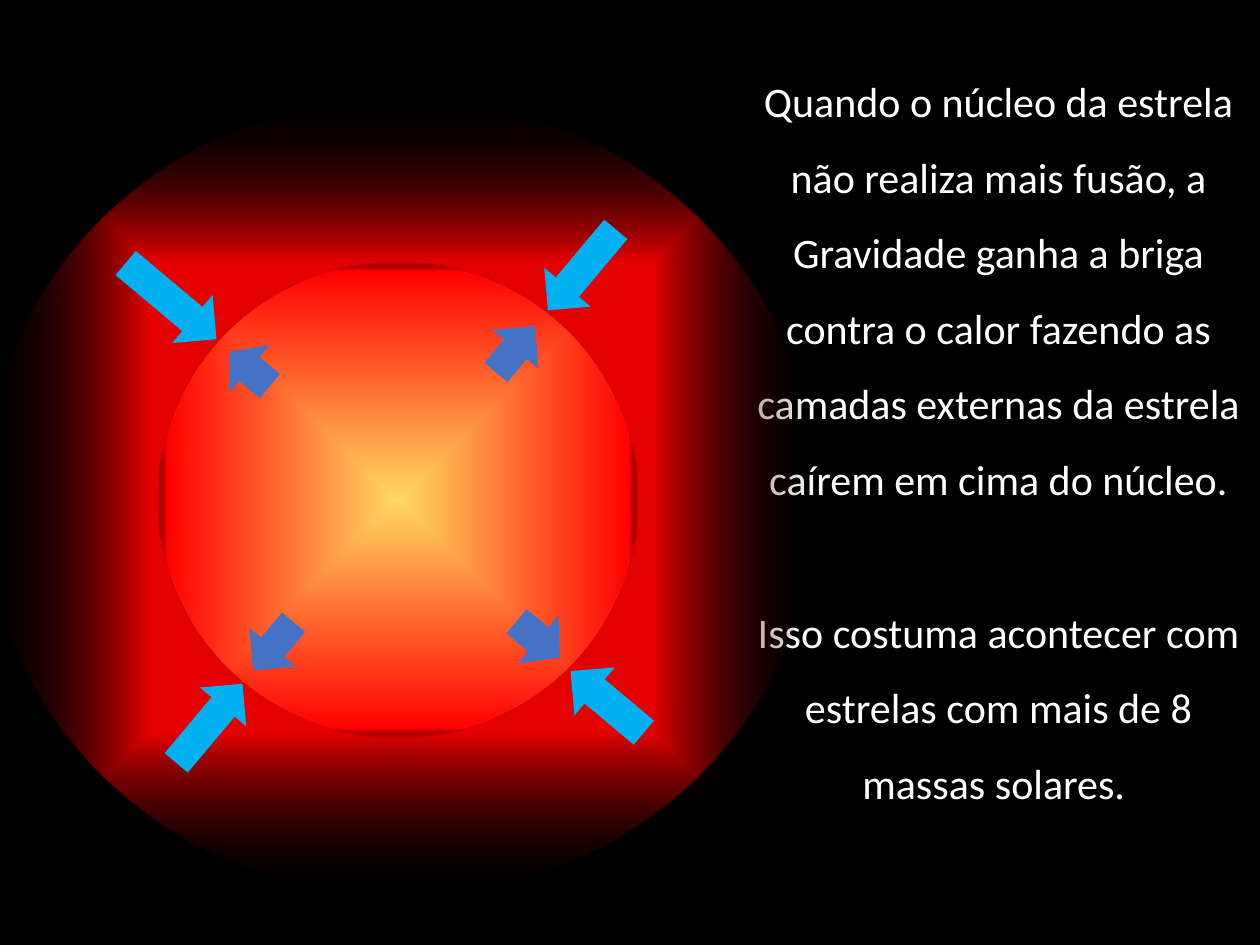
from dataclasses import dataclass

from lxml import etree
from pptx import Presentation
from pptx.dml.color import RGBColor
from pptx.enum.shapes import MSO_SHAPE
from pptx.enum.text import MSO_AUTO_SIZE, PP_ALIGN
from pptx.oxml.ns import qn
from pptx.shapes.autoshape import Shape
from pptx.shapes.shapetree import GroupShapes, SlideShapes
from pptx.slide import Slide
from pptx.util import Cm, Pt

OVAL = MSO_SHAPE.OVAL
DOWN_ARROW = MSO_SHAPE.DOWN_ARROW
CENTER = PP_ALIGN.CENTER
GROW_TO_FIT = MSO_AUTO_SIZE.SHAPE_TO_FIT_TEXT
BLANK_LAYOUT = 6

COLORS = {
    "space": "000000",
    "text": "FFFFFF",
    "red": "FF0000",
    "core": "FFD963",
    "pressure": "4472C4",
    "gravity": "00B0F0",
}

EXPLANATION = (
    "Quando o núcleo da estrela não realiza mais fusão, a Gravidade ganha a briga "
    "contra o calor fazendo as camadas externas da estrela caírem em cima do núcleo.",
    "Isso costuma acontecer com estrelas com mais de 8 massas solares. ",
)


@dataclass(frozen=True)
class Stop:
    position: int
    color: str
    opacity: int = 100


@dataclass(frozen=True)
class Layer:
    left: float
    top: float
    width: float
    height: float
    stops: tuple[Stop, ...]


@dataclass(frozen=True)
class Force:
    """Arrow given by its centre, size (cm) and rotation (degrees)."""
    center_x: float
    center_y: float
    breadth: float
    length: float
    angle: int
    color: str


LAYERS = (
    Layer(-0.3, 1.98, 16.76, 16.1,
          (Stop(59, "red", 89), Stop(100, "space", 0), Stop(100, "space"))),
    Layer(3.18, 5.28, 9.7, 9.58,
          (Stop(0, "core"), Stop(96, "red"), Stop(100, "space", 0))),
)

FORCES = (
    Force(5.51, 13.03, 1.22, 1.27, 40, "pressure"),
    Force(5.03, 7.44, 1.27, 1.07, 130, "pressure"),
    Force(10.39, 7.04, 1.22, 1.22, 220, "pressure"),
    Force(10.85, 12.89, 1.27, 1.14, 310, "pressure"),
    Force(11.73, 5.44, 1.22, 2.13, 40, "gravity"),
    Force(12.24, 14.15, 1.27, 1.93, 130, "gravity"),
    Force(4.22, 14.58, 1.22, 2.08, 220, "gravity"),
    Force(3.45, 6.07, 1.27, 2.39, 310, "gravity"),
)


def rgb(name: str) -> RGBColor:
    return RGBColor.from_string(COLORS[name])


def fill_from_center(shape: Shape, stops: tuple[Stop, ...]) -> None:
    """Give the shape a gradient that spreads from its centre."""
    shape.fill.background()
    no_fill = shape.fill._xPr.find(qn("a:noFill"))
    gradient = etree.Element(qn("a:gradFill"), rotWithShape="1")
    stop_list = etree.SubElement(gradient, qn("a:gsLst"))
    for stop in stops:
        entry = etree.SubElement(stop_list, qn("a:gs"), pos=str(stop.position * 1000))
        color = etree.SubElement(entry, qn("a:srgbClr"), val=COLORS[stop.color])
        if stop.opacity < 100:
            etree.SubElement(color, qn("a:alpha"), val=str(stop.opacity * 1000))
    spread = etree.SubElement(gradient, qn("a:path"), {"path": "shape"})
    etree.SubElement(spread, qn("a:fillToRect"),
                     {side: "50000" for side in ("l", "t", "r", "b")})
    no_fill.getparent().replace(no_fill, gradient)


def add_layer(shapes: GroupShapes, layer: Layer) -> None:
    sphere = shapes.add_shape(OVAL, Cm(layer.left), Cm(layer.top),
                              Cm(layer.width), Cm(layer.height))
    sphere.shadow.inherit = False
    sphere.line.fill.background()
    fill_from_center(sphere, layer.stops)


def add_force(shapes: SlideShapes, force: Force) -> None:
    arrow = shapes.add_shape(
        DOWN_ARROW,
        Cm(force.center_x - force.breadth / 2), Cm(force.center_y - force.length / 2),
        Cm(force.breadth), Cm(force.length))
    arrow.rotation = force.angle
    arrow.shadow.inherit = False
    arrow.line.fill.background()
    arrow.fill.solid()
    arrow.fill.fore_color.rgb = rgb(force.color)


def add_explanation(slide: Slide) -> None:
    box = slide.shapes.add_textbox(Cm(14.96), Cm(0.89), Cm(10.34), Cm(15.65))
    frame = box.text_frame
    frame.text = "\n".join(EXPLANATION)
    frame.word_wrap = True
    frame.auto_size = GROW_TO_FIT
    for paragraph in frame.paragraphs:
        paragraph.alignment = CENTER
        paragraph.line_spacing = 1.5
        for run in paragraph.runs:
            run.font.name = "Calibri"
            run.font.size = Pt(24)
            run.font.color.rgb = rgb("text")
    # One line of space between the two statements
    frame.paragraphs[-1].space_before = Pt(44)


def main() -> None:
    presentation = Presentation()
    presentation.slide_width = Cm(25.4)
    presentation.slide_height = Cm(19.05)
    slide = presentation.slides.add_slide(presentation.slide_layouts[BLANK_LAYOUT])
    slide.background.fill.solid()
    slide.background.fill.fore_color.rgb = rgb("space")

    # Text lies behind the fading edge of the star
    add_explanation(slide)

    # Star: outer layers and core
    star = slide.shapes.add_group_shape()
    for layer in LAYERS:
        add_layer(star.shapes, layer)

    # Pressure pushes outwards, gravity inwards
    for force in FORCES:
        add_force(slide.shapes, force)

    presentation.save("out.pptx")


if __name__ == "__main__":
    main()
